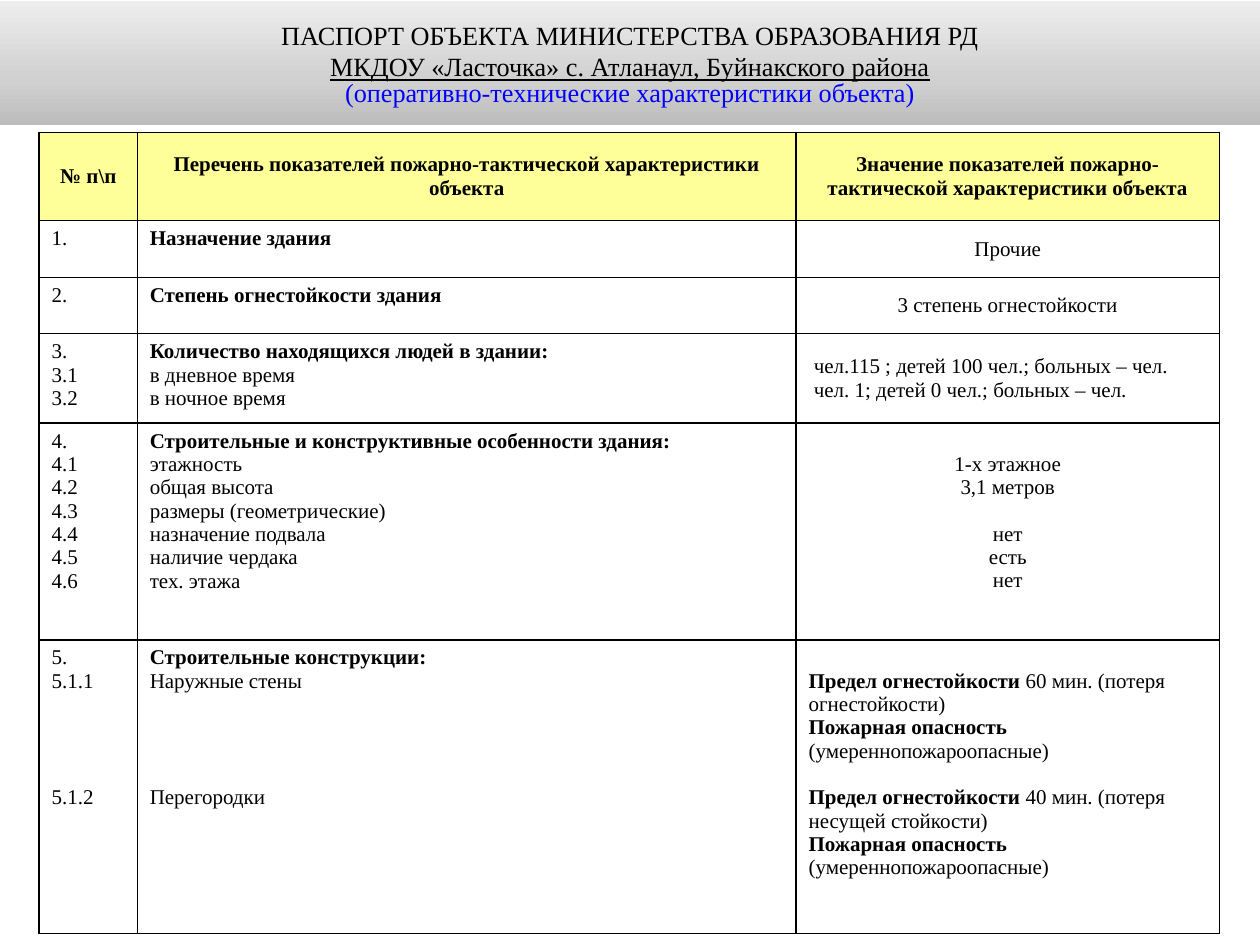
import copy

import pptx
import pptx.dml.color
import pptx.enum.shapes
import pptx.enum.text
import pptx.oxml
import pptx.util
from pptx.util import Cm

FONT = "Times New Roman"
STEP = 13.3  # height of one table line, points
CENTER = pptx.enum.text.PP_ALIGN.CENTER
MIDDLE = pptx.enum.text.MSO_ANCHOR.MIDDLE
NS = "http://schemas.openxmlformats.org/drawingml/2006/main"

COLS = [1.98, 13.28, 8.53]
ROWS = [1.78, 1.14, 1.14, 1.8, 4.37, 5.92]

# Text between asterisks is bold; an empty string leaves one line free.
CELLS = [
    [[r"*№ п\п*"],
     ["*Перечень показателей пожарно-тактической характеристики объекта*"],
     ["*Значение показателей пожарно-тактической характеристики объекта*"]],
    [["1."], ["*Назначение здания*"], ["Прочие"]],
    [["2."], ["*Степень огнестойкости здания*"], ["3 степень огнестойкости"]],
    [["3.", "3.1", "3.2"],
     ["*Количество находящихся людей в здании:*",
      "в дневное время", "в ночное время"],
     [" чел.115 ; детей 100 чел.; больных – чел.",
      " чел. 1; детей 0 чел.; больных – чел."]],
    [["4.", "4.1", "4.2", "4.3", "4.4", "4.5", "4.6"],
     ["*Строительные и конструктивные особенности здания:*",
      "этажность", "общая высота", "размеры (геометрические)",
      "назначение подвала", "наличие чердака", "тех. этажа"],
     ["", "1-х этажное", "3,1 метров", "", "нет", "есть", "нет"]],
    [["5.", "5.1.1", "", "", "", "", "5.1.2"],
     ["*Строительные конструкции:*", "Наружные стены",
      "", "", "", "", "Перегородки"],
     ["",
      "*Предел огнестойкости *60 мин. (потеря огнестойкости)",
      "*Пожарная опасность *(умереннопожароопасные)",
      "",
      "*Предел огнестойкости *40 мин. (потеря несущей стойкости)",
      "*Пожарная опасность*",
      "(умереннопожароопасные)"]],
]


def rgb(code):
    return pptx.dml.color.RGBColor.from_string(code)


def style(run, size, color="000000", bold=False, under=False):
    font = run.font
    font.name = FONT
    font.size = pptx.util.Pt(size)
    font.bold = bold
    font.underline = under
    font.color.rgb = rgb(color)


def border(cell):
    """Draw a black 1 pt line on all four sides."""
    props = cell._tc.get_or_add_tcPr()
    for i, side in enumerate(("lnL", "lnR", "lnT", "lnB")):
        props.insert(i, pptx.oxml.parse_xml(
            f'<a:{side} xmlns:a="{NS}" w="12700"><a:solidFill>'
            f'<a:srgbClr val="000000"/></a:solidFill></a:{side}>'))


def write(cell, lines, align):
    """Fill a cell, turning free lines into top margin or space before."""
    frame = cell.text_frame
    first, gap = True, 0
    for line in lines:
        if not line:
            gap += 1
            continue
        para = frame.paragraphs[0] if first else frame.add_paragraph()
        if gap and first:
            cell.margin_top = Cm(0.13) + pptx.util.Pt(STEP * gap)
        elif gap:
            para.space_before = pptx.util.Pt(STEP * gap)
        first, gap = False, 0
        para.alignment = align
        for i, part in enumerate(line.split("*")):
            if part:
                run = para.add_run()
                run.text = part
                style(run, 12, bold=i % 2 == 1)


def add_grid(slide):
    frame = slide.shapes.add_table(
        len(ROWS), len(COLS), Cm(0.79), Cm(2.67),
        Cm(sum(COLS)), Cm(sum(ROWS)))
    table = frame.table
    for col, width in zip(table.columns, COLS):
        col.width = Cm(width)
    for row, height in zip(table.rows, ROWS):
        row.height = Cm(height)
    for r, line in enumerate(CELLS):
        for c, text in enumerate(line):
            cell = table.cell(r, c)
            cell.margin_left = cell.margin_right = Cm(0.25)
            cell.margin_top = cell.margin_bottom = Cm(0.13)
            cell.fill.solid()
            cell.fill.fore_color.rgb = rgb("FFFFFF" if r else "FFFF99")
            border(cell)
            value = c == 2
            if r == 0 or (value and r < 4):
                cell.vertical_anchor = MIDDLE
            centred = r == 0 or (value and r in (1, 2, 4))
            write(cell, text, CENTER if centred else None)


def shade(fill, stops):
    """Apply a three-stop gradient that runs upwards."""
    fill.gradient()
    fill.gradient_angle = 90
    last = fill.gradient_stops[1]._gs
    last.addnext(copy.deepcopy(last))
    for stop, (place, color) in zip(fill.gradient_stops, stops):
        stop.position = place
        stop.color.rgb = rgb(color)


def add_title(slide):
    box = slide.shapes.add_shape(
        pptx.enum.shapes.MSO_SHAPE.RECTANGLE,
        Cm(0), Cm(0.03), Cm(25.4), Cm(2.49))
    box.shadow.inherit = False
    box.line.fill.background()
    shade(box.fill, [(0, "BCBCBC"), (0.35, "D0D0D0"), (1, "EDEDED")])
    frame = box.text_frame
    frame.word_wrap = True
    frame.vertical_anchor = MIDDLE
    frame.text = "\n".join([
        "ПАСПОРТ ОБЪЕКТА МИНИСТЕРСТВА ОБРАЗОВАНИЯ РД",
        "МКДОУ «Ласточка» с. Атланаул, Буйнакского района",
        "(оперативно-технические характеристики объекта)"])
    looks = [{}, {"under": True}, {"color": "0000FF"}]
    for para, look in zip(frame.paragraphs, looks):
        para.alignment = CENTER
        style(para.runs[0], 15, **look)
    frame.paragraphs[2].line_spacing = 0.8


def main():
    deck = pptx.Presentation()
    deck.slide_width, deck.slide_height = Cm(25.4), Cm(19.05)
    slide = deck.slides.add_slide(deck.slide_layouts[6])
    add_grid(slide)
    add_title(slide)
    deck.save("out.pptx")


if __name__ == "__main__":
    main()
